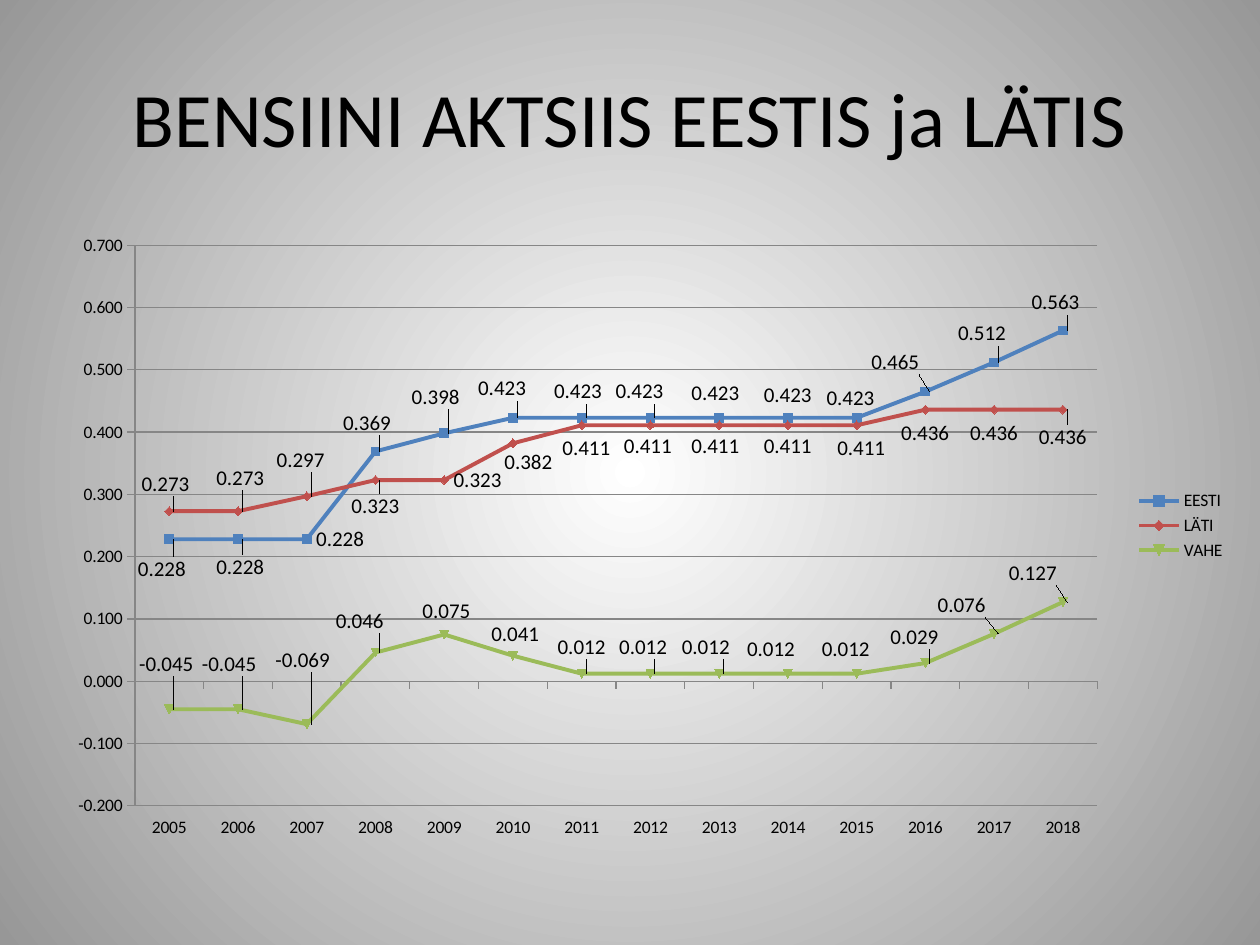
from dataclasses import dataclass

from lxml.etree import SubElement
from pptx import Presentation
from pptx.chart.chart import Chart
from pptx.chart.data import CategoryChartData
from pptx.chart.series import LineSeries
from pptx.dml.color import RGBColor
from pptx.enum.chart import XL_CHART_TYPE, XL_LABEL_POSITION, XL_LEGEND_POSITION
from pptx.enum.chart import XL_TICK_LABEL_POSITION, XL_TICK_MARK
from pptx.enum.text import MSO_ANCHOR, PP_ALIGN
from pptx.oxml import parse_xml
from pptx.oxml.ns import nsdecls, qn
from pptx.slide import Slide
from pptx.util import Inches, Pt


@dataclass(frozen=True)
class Theme:
    font: str = "Calibri"
    text: RGBColor = RGBColor(0, 0, 0)
    axis: RGBColor = RGBColor(0x86, 0x86, 0x86)
    center: RGBColor = RGBColor(0xFF, 0xFF, 0xFF)
    edge: RGBColor = RGBColor(0x97, 0x97, 0x97)
    title_size: Pt = Pt(44)
    chart_size: Pt = Pt(10)
    label_size: Pt = Pt(12)
    line_width: Pt = Pt(2.25)
    axis_width: Pt = Pt(0.75)


@dataclass(frozen=True)
class ExciseLine:
    name: str
    color: str
    values: list[float]
    label_shifts: dict[int, tuple[float, float]]


THEME = Theme()
NUMBER_FORMAT = "0.000"
YEARS = [str(year) for year in range(2005, 2019)]
PLOT_AREA = {"x": 0.078, "y": 0.05, "w": 0.804, "h": 0.9}

# Label shifts are percentages of the chart's width and height.
LINES = [
    ExciseLine(
        "EESTI", "4F81BD",
        [0.228] * 3 + [0.369, 0.398] + [0.423] * 6 + [0.465, 0.512, 0.563],
        {0: (-3.4, 4.8), 1: (-2.6, 4.5), 3: (-3.5, -4.6), 4: (-3.5, -5.8),
         5: (-3.7, -4.7), 6: (-3.1, -4.2), 7: (-3.7, -4.2), 8: (-3.1, -3.9),
         9: (-2.8, -3.6), 10: (-3.3, -3.1), 11: (-5.3, -4.7),
         12: (-3.8, -4.6), 13: (-3.4, -4.5)},
    ),
    ExciseLine(
        "LÄTI", "C0504D",
        [0.273, 0.273, 0.297, 0.323, 0.323, 0.382] + [0.411] * 5 + [0.436] * 3,
        {0: (-3.1, -4.3), 1: (-2.6, -5.3), 2: (-3.3, -5.8), 3: (-2.8, 4.2),
         5: (-1.5, 3.0), 6: (-2.4, 3.7), 7: (-3.0, 3.4), 8: (-3.1, 3.4),
         9: (-2.8, 3.4), 10: (-2.4, 3.7), 11: (-2.8, 3.8),
         12: (-2.8, 3.8), 13: (-2.8, 4.4)},
    ),
    ExciseLine(
        "VAHE", "9BBB59",
        [-0.045, -0.045, -0.069, 0.046, 0.075, 0.041] + [0.012] * 5
        + [0.029, 0.076, 0.127],
        {0: (-3.3, -7.3), 1: (-3.8, -7.3), 2: (-3.4, -10.3), 3: (-4.1, -5.1),
         4: (-2.6, -3.8), 5: (-2.6, -3.5), 6: (-2.8, -4.3), 7: (-3.4, -4.3),
         8: (-3.9, -4.3), 9: (-4.2, -4.0), 10: (-3.7, -4.0),
         11: (-3.7, -4.2), 12: (-5.5, -4.6), 13: (-5.3, -4.6)},
    ),
]


def paint_background(page: Slide) -> None:
    fill = page.background.fill
    fill.gradient()
    for stop, color in zip(fill.gradient_stops, (THEME.center, THEME.edge)):
        stop.color.rgb = color
    gradient = page._element.find(".//" + qn("a:gradFill"))
    gradient.remove(gradient.find(qn("a:lin")))
    circle = SubElement(gradient, qn("a:path"), path="circle")
    SubElement(circle, qn("a:fillToRect"), l="50000", t="50000", r="50000", b="50000")


def style_font(font, size: Pt) -> None:
    font.name = THEME.font
    font.size = size
    font.color.rgb = THEME.text


def add_title(page: Slide, words: str) -> None:
    box = page.shapes.add_textbox(Inches(0.5), Inches(0.3), Inches(9), Inches(1.25))
    frame = box.text_frame
    frame.word_wrap = True
    frame.vertical_anchor = MSO_ANCHOR.MIDDLE
    para = frame.paragraphs[0]
    para.alignment = PP_ALIGN.CENTER
    span = para.add_run()
    span.text = words
    style_font(span.font, THEME.title_size)


def manual_layout(**settings: object):
    parts = "".join(f'<c:{tag} val="{value}"/>' for tag, value in settings.items())
    return parse_xml(
        f'<c:layout {nsdecls("c")}><c:manualLayout>{parts}</c:manualLayout></c:layout>'
    )


def style_line(line, color: RGBColor, width: Pt) -> None:
    line.color.rgb = color
    line.width = width


def style_axes(chart: Chart) -> None:
    for axis in (chart.category_axis, chart.value_axis):
        axis.major_tick_mark = XL_TICK_MARK.OUTSIDE
        axis.minor_tick_mark = XL_TICK_MARK.NONE
        style_line(axis.format.line, THEME.axis, THEME.axis_width)
        style_font(axis.tick_labels.font, THEME.chart_size)
    chart.category_axis.tick_label_position = XL_TICK_LABEL_POSITION.LOW
    values = chart.value_axis
    values.minimum_scale, values.maximum_scale, values.major_unit = -0.2, 0.7, 0.1
    values.tick_labels.number_format = NUMBER_FORMAT
    values.tick_labels.number_format_is_linked = False
    values.has_major_gridlines = True
    style_line(values.major_gridlines.format.line, THEME.axis, THEME.axis_width)


def style_series(series: LineSeries, excise: ExciseLine) -> None:
    series.smooth = False
    style_line(series.format.line, RGBColor.from_string(excise.color), THEME.line_width)
    labels = series.data_labels
    labels.show_value = True
    labels.position = XL_LABEL_POSITION.RIGHT
    labels.number_format = NUMBER_FORMAT
    labels.number_format_is_linked = False
    style_font(labels.font, THEME.label_size)
    for index in excise.label_shifts:
        label = series.points[index].data_label
        style_font(label.font, THEME.label_size)
        label.position = XL_LABEL_POSITION.RIGHT
    for element in series._element.iter(qn("c:dLbl")):
        mark = element.find(qn("c:idx"))
        across, down = excise.label_shifts[int(mark.get("val"))]
        mark.addnext(manual_layout(x=across / 100, y=down / 100))


def add_excise_chart(page: Slide) -> None:
    data = CategoryChartData(number_format=NUMBER_FORMAT)
    data.categories = YEARS
    for excise in LINES:
        data.add_series(excise.name, excise.values)
    chart = page.shapes.add_chart(
        XL_CHART_TYPE.LINE_MARKERS,
        Inches(0.33), Inches(1.7), Inches(9.5), Inches(4.95), data,
    ).chart
    chart.has_title = False
    style_font(chart.font, THEME.chart_size)
    chart.has_legend = True
    chart.legend.position = XL_LEGEND_POSITION.RIGHT
    chart.legend.include_in_layout = False
    style_font(chart.legend.font, THEME.chart_size)
    style_axes(chart)
    chart.plots[0].vary_by_categories = False
    for series, excise in zip(chart.plots[0].series, LINES):
        style_series(series, excise)
    area = chart._chartSpace.find(".//" + qn("c:plotArea"))
    for layout in area.findall(qn("c:layout")):
        area.remove(layout)
    area.insert(0, manual_layout(
        layoutTarget="inner", xMode="edge", yMode="edge", **PLOT_AREA
    ))


def main() -> None:
    deck = Presentation()
    deck.slide_width, deck.slide_height = Inches(10), Inches(7.5)
    page = deck.slides.add_slide(deck.slide_layouts[6])
    paint_background(page)
    add_title(page, "BENSIINI AKTSIIS EESTIS ja LÄTIS")
    add_excise_chart(page)
    deck.save("out.pptx")


if __name__ == "__main__":
    main()
